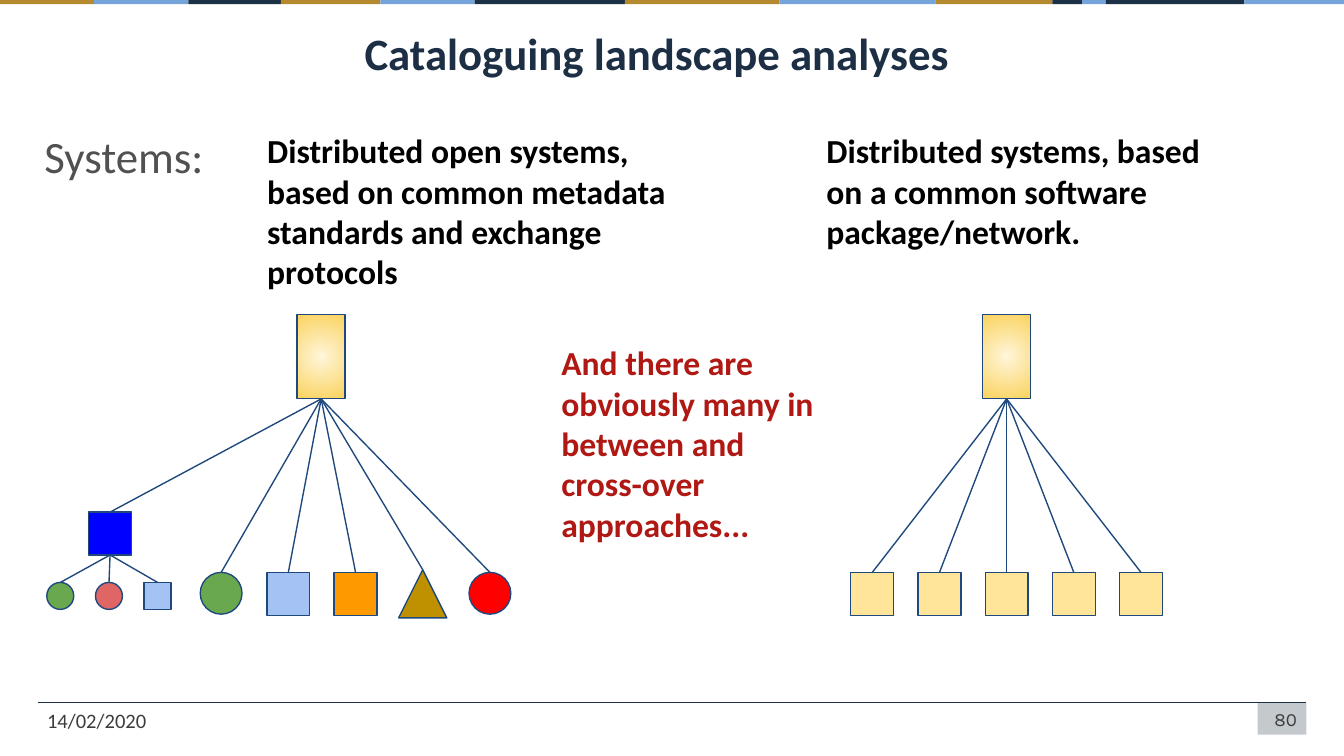
from itertools import pairwise

from lxml import etree
from pptx import Presentation
from pptx.dml import color
from pptx.enum import shapes, text
from pptx.oxml import ns
from pptx.util import Cm, Pt

KIND = shapes.MSO_SHAPE
SQUARE, CIRCLE, TRIANGLE = KIND.FLOWCHART_PROCESS, KIND.OVAL, KIND.ISOSCELES_TRIANGLE
NAVY, GOLD, BLUE, DARK = "1D2F45", "B5892D", "75A5D8", "1C3046"
OUTLINE, GREY = "1F497D", "3C3C3C"
PITCH, NODE = 1.27, 0.81
HUB_WIDTH, HUB_HEIGHT = 0.91, 1.6
SIDES = ("margin_left", "margin_top", "margin_right", "margin_bottom")

STYLES = {
    "title": {"size": Pt(24), "name": "Calibri", "bold": True},
    "heading": {"size": Pt(24), "name": "Calibri"},
    "statement": {"size": Pt(18), "name": "Calibri", "bold": True},
    "date": {"size": Pt(11), "name": "Calibri"},
    "number": {"size": Pt(10), "name": "Karla"},
}
TIGHT = dict(zip(SIDES, (Cm(0.18), Cm(0.1), Cm(0.18), Cm(0.1))))
ROOMY = dict.fromkeys(SIDES, Cm(0.25))


def rgb(value):
    """Turn a hex string into a colour."""
    return color.RGBColor.from_string(value)


def apply(target, values):
    """Set every named attribute on the target."""
    for name, value in values.items():
        setattr(target, name, value)


def add_text(slide, box, wording, style, hue, margins=TIGHT, align=text.PP_ALIGN.LEFT):
    """Write one wrapped paragraph in the box."""
    frame = slide.shapes.add_textbox(*map(Cm, box)).text_frame
    apply(frame, {"word_wrap": True, "vertical_anchor": text.MSO_ANCHOR.TOP, **margins})
    paragraph = frame.paragraphs[0]
    paragraph.alignment = align
    run = paragraph.add_run()
    run.text = wording
    apply(run.font, STYLES[style])
    run.font.color.rgb = rgb(hue)


def add_node(canvas, kind, box, fill, outline=None):
    """Draw a filled preset shape, outlined when a colour is given."""
    node = canvas.add_shape(kind, *map(Cm, box))
    node.shadow.inherit = False
    node.fill.solid()
    node.fill.fore_color.rgb = rgb(fill)
    if outline:
        node.line.color.rgb = rgb(outline)
        node.line.width = Pt(0.75)
    else:
        node.line.fill.background()
    return node


def add_line(canvas, start, end, hue=OUTLINE, width=0.75):
    """Draw a straight connector without a shadow."""
    line = canvas.add_connector(shapes.MSO_CONNECTOR.STRAIGHT, *map(Cm, (*start, *end)))
    line.line.color.rgb = rgb(hue)
    line.line.width = Pt(width)
    properties = line._element.spPr
    etree.SubElement(properties, ns.qn("a:effectLst"))


def add_hub(canvas, center, top):
    """Draw the central system with a radial glow and return its lower anchor."""
    box = (center - HUB_WIDTH / 2, top, HUB_WIDTH, HUB_HEIGHT)
    hub = add_node(canvas, KIND.RECTANGLE, box, "FAD25C", OUTLINE)
    hub.fill.gradient()
    for stop, hue in zip(hub.fill.gradient_stops, ("FFF6DB", "FAD25C")):
        stop.color.rgb = rgb(hue)
    gradient = hub._element.spPr.find(ns.qn("a:gradFill"))
    gradient.remove(gradient.find(ns.qn("a:lin")))
    radial = etree.SubElement(gradient, ns.qn("a:path"), path="circle")
    etree.SubElement(radial, ns.qn("a:fillToRect"), dict.fromkeys("ltrb", "50000"))
    return center, top + HUB_HEIGHT


def add_fan(canvas, apex, leaves):
    """Join the apex to the top of each leaf."""
    for kind, hue, center, top, size in leaves:
        add_line(canvas, (center, top), apex)
        add_node(canvas, kind, (center - size / 2, top, size, size), hue, OUTLINE)


def stripe_band(slide, box):
    """Draw the coloured stripes along the top edge."""
    left, top, _, height = box
    edges = (0, 1.78, 3.56, 5.31, 7.19, 8.97, 11.81, 14.73, 17.68, 19.89, 20.45, 20.9, 23.52, 25.4)
    hues = (GOLD, BLUE, DARK, GOLD, BLUE, DARK, GOLD, BLUE, GOLD, DARK, BLUE, DARK, BLUE)
    for (start, end), hue in zip(pairwise(edges), hues):
        add_node(slide.shapes, KIND.RECTANGLE, (left + start, top, end - start, height), hue)


def footer(slide, box):
    """Draw the rule, the date and the page number."""
    left, top, width, height = box
    right = left + width
    tab = add_node(slide.shapes, KIND.RECTANGLE, (right - 0.92, top, 0.92, height), NAVY)
    tint = tab._element.spPr.find(".//" + ns.qn("a:srgbClr"))
    etree.SubElement(tint, ns.qn("a:alpha"), val="26000")
    add_line(slide.shapes, (right, top), (left, top), NAVY, 1)
    add_text(slide, (left, top, 5.92, height), "14/02/2020", "date", GREY)
    add_text(slide, (right - 6.5, top, 6.5, height), "80", "number", GREY,
             align=text.PP_ALIGN.RIGHT)


def open_systems(slide, box):
    """Draw the hub with mixed systems and a nested branch."""
    left, top, _, height = box
    row = top + height - NODE
    mixed = ((CIRCLE, "6AA84F", 0, 0.79), (SQUARE, "A4C2F4", 0, NODE), (SQUARE, "FF9900", 0, NODE),
             (TRIANGLE, "BF9000", -0.05, 0.91), (CIRCLE, "FF0000", 0, 0.79))
    branch = left + 1.19, row - 1.14
    leaves = [(SQUARE, "0000FF", *branch, NODE)]
    leaves += [(kind, hue, left + 3.29 + PITCH * place, row + shift, size)
               for place, (kind, hue, shift, size) in enumerate(mixed)]
    canvas = slide.shapes.add_group_shape().shapes
    add_fan(canvas, add_hub(canvas, left + 5.18, top), leaves)
    small = ((CIRCLE, "6AA84F"), (CIRCLE, "E06666"), (SQUARE, "A4C2F4"))
    nested = [(kind, hue, left + 0.25 + 0.92 * place, row + 0.19, 0.51)
              for place, (kind, hue) in enumerate(small)]
    add_fan(slide.shapes, (branch[0], branch[1] + NODE), nested)


def common_software(slide, box):
    """Draw the hub with five identical systems."""
    left, top, width, height = box
    canvas = slide.shapes.add_group_shape().shapes
    leaves = [(SQUARE, "FFE599", left + NODE / 2 + PITCH * place, top + height - NODE, NODE)
              for place in range(5)]
    add_fan(canvas, add_hub(canvas, left + width / 2, top), leaves)


def statements(slide, box):
    """Write the title, the heading and the three statements."""
    left, top, _, _ = box
    add_text(slide, (left + 6.05, top, 18, 1.12), "Cataloguing landscape analyses", "title", NAVY)
    add_text(slide, (left, top + 1.95, 5.36, 1.12), "Systems:", "heading", "515151")
    for x, y, width, hue, wording in (
        (4.14, 1.83, 8.28, "000000", "Distributed open systems, based on common metadata "
                                     "standards and exchange protocols"),
        (14.71, 1.83, 8.28, "000000", "Distributed systems, based on a common software "
                                      "package/network."),
        (9.7, 5.84, 5.59, "B01813", "And there are obviously many in between and "
                                    "cross-over approaches..."),
    ):
        add_text(slide, (left + x, top + y, width, 4.67), wording, "statement", hue, ROOMY)


def main():
    """Build and save the slide."""
    deck = Presentation()
    apply(deck, {"slide_width": Cm(25.4), "slide_height": Cm(14.29)})
    slide = deck.slides.add_slide(deck.slide_layouts[6])
    footer(slide, (0.71, 13.28, 23.98, 0.61))
    stripe_band(slide, (0, 0, 25.4, 0.08))
    statements(slide, (0.66, 0.38, 24.05, 10.51))
    open_systems(slide, (0.89, 5.94, 8.76, 5.69))
    common_software(slide, (16.08, 5.94, 5.89, 5.69))
    deck.save("out.pptx")


if __name__ == "__main__":
    main()
